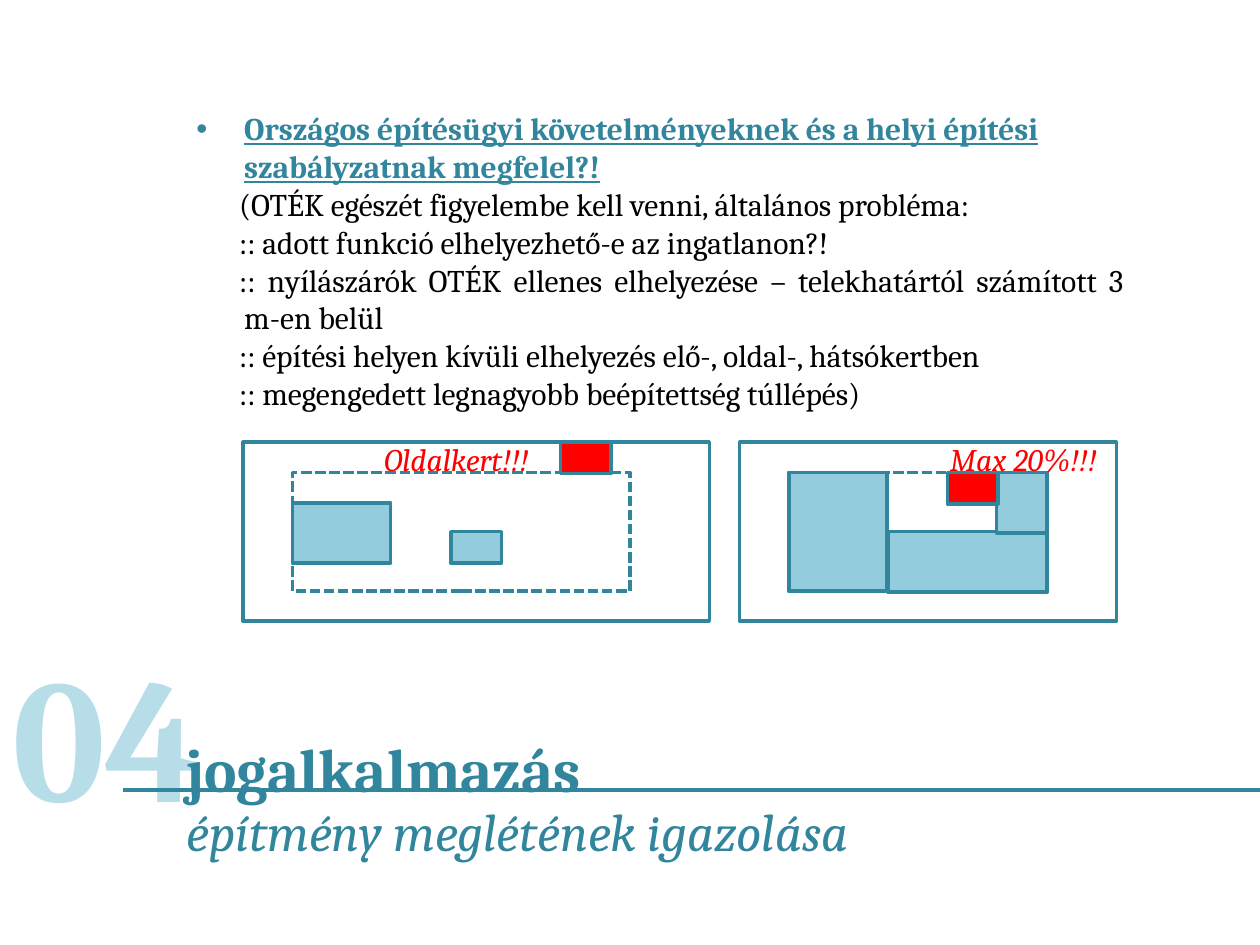
from lxml import etree
from pptx import Presentation
from pptx.dml.color import RGBColor
from pptx.enum import dml, shapes, text
from pptx.oxml import ns
from pptx.util import Inches, Pt

COLORS = {"teal": "31859C", "pale": "B7DEE8", "building": "93CDDD",
          "red": "FF0000", "white": "FFFFFF", "black": "000000"}
FONT = "Cambria"

HEADING = ("Országos építésügyi követelményeknek és a helyi építési "
           "szabályzatnak megfelel?!")
ISSUES = [
    "(OTÉK egészét figyelembe kell venni, általános probléma:",
    ":: adott funkció elhelyezhető-e az ingatlanon?!",
    ":: nyílászárók OTÉK ellenes elhelyezése – telekhatártól számított 3 m-en belül",
    ":: építési helyen kívüli elhelyezés elő-, oldal-, hátsókertben",
    ":: megengedett legnagyobb beépítettség túllépés)",
]

# Plot plans, back to front: left, top, width, height, fill (None = dashed zone)
SIDE_YARD_PLAN = [
    (1.93, 3.51, 3.7, 1.42, "white"),
    (2.32, 3.99, 0.78, 0.48, "building"),
    (2.32, 3.75, 2.68, 0.94, None),
    (4.45, 3.51, 0.4, 0.25, "red"),
    (3.58, 4.22, 0.4, 0.25, "building"),
]
COVERAGE_PLAN = [
    (5.87, 3.51, 2.99, 1.42, "white"),
    (6.26, 3.75, 2.05, 0.94, None),
    (6.26, 3.75, 0.78, 0.94, "building"),
    (7.05, 4.22, 1.26, 0.48, "building"),
    (7.91, 3.75, 0.4, 0.48, "building"),
    (7.52, 3.75, 0.4, 0.25, "red"),
]


def rgb(name):
    return RGBColor.from_string(COLORS[name])


def add_box(s, left, top, width, height, wrap=True):
    sp = s.shapes.add_textbox(*map(Inches, (left, top, width, height)))
    sp.text_frame.word_wrap = wrap
    return sp.text_frame


def set_text(p, content, size, color, bold=False, italic=False, underline=False):
    p.text = content
    for r in p.runs:
        f = r.font
        f.name, f.size = FONT, Pt(size)
        f.bold, f.italic, f.underline = bold, italic, underline
        f.color.rgb = rgb(color)


def set_indent(p, margin, first, bullet=None):
    pPr = p._p.get_or_add_pPr()
    pPr.set("marL", str(Inches(margin)))
    pPr.set("indent", str(Inches(first)))
    if bullet:
        font = etree.SubElement(pPr, ns.qn("a:buFont"))
        font.set("typeface", "Arial")
        etree.SubElement(pPr, ns.qn("a:buChar")).set("char", bullet)


def add_plan(s, parts):
    for left, top, width, height, fill in parts:
        sp = s.shapes.add_shape(shapes.MSO_SHAPE.RECTANGLE,
                                *map(Inches, (left, top, width, height)))
        sp.shadow.inherit = False
        sp.line.color.rgb = rgb("teal")
        sp.line.width = Pt(2)
        if fill:
            sp.fill.solid()
            sp.fill.fore_color.rgb = rgb(fill)
        else:
            sp.fill.background()
            sp.line.dash_style = dml.MSO_LINE.SQUARE_DOT
            # SQUARE_DOT is sysDot; the building zone uses the longer sysDash
            sp.line._ln.find(ns.qn("a:prstDash")).set("val", "sysDash")


def add_label(s, left, width, content):
    tf = add_box(s, left, 3.44, width, 0.4, wrap=False)
    set_text(tf.paragraphs[0], content, 18, "red", italic=True)


def add_rule(s, left, right, y):
    line = s.shapes.add_connector(shapes.MSO_CONNECTOR.STRAIGHT,
                                  Inches(left), Inches(y), Inches(right), Inches(y))
    line.line.color.rgb = rgb("teal")
    line.line.width = Pt(2.25)
    etree.SubElement(line._element.spPr, ns.qn("a:effectLst"))


def add_requirements(s):
    tf = add_box(s, 1.46, 0.82, 7.56, 2.53)
    p = tf.paragraphs[0]
    set_text(p, HEADING, 18, "teal", bold=True, underline=True)
    set_indent(p, 0.38, -0.38, "•")
    for issue in ISSUES:
        p = tf.add_paragraph()
        set_text(p, issue, 18, "black")
        p.alignment = text.PP_ALIGN.JUSTIFY
        set_indent(p, 0.38, -0.04)


def add_title(s):
    tf = add_box(s, 1.38, 5.82, 8.5, 1.08)
    tf.vertical_anchor = text.MSO_ANCHOR.MIDDLE
    title, subtitle = tf.paragraphs[0], tf.add_paragraph()
    set_text(title, "jogalkalmazás", 35, "teal", bold=True)
    set_text(subtitle, "építmény meglétének igazolása", 30, "teal", italic=True)
    for p in (title, subtitle):
        p.line_spacing = 0.9


def main():
    prs = Presentation()
    prs.slide_width, prs.slide_height = Inches(10), Inches(7.5)
    s = prs.slides.add_slide(prs.slide_layouts[6])

    # Chapter number and rule
    tf = add_box(s, 0, 4.93, 1.81, 1.78)
    set_text(tf.paragraphs[0], "04", 100, "pale", bold=True)
    add_rule(s, 0.98, 10, 6.27)

    # Requirements and plot plans
    add_requirements(s)
    add_plan(s, SIDE_YARD_PLAN)
    add_plan(s, COVERAGE_PLAN)
    add_label(s, 2.95, 1.42, "Oldalkert!!!")
    add_label(s, 7.44, 1.47, "Max 20%!!!")

    # Chapter title
    add_title(s)
    prs.save("out.pptx")


if __name__ == "__main__":
    main()
